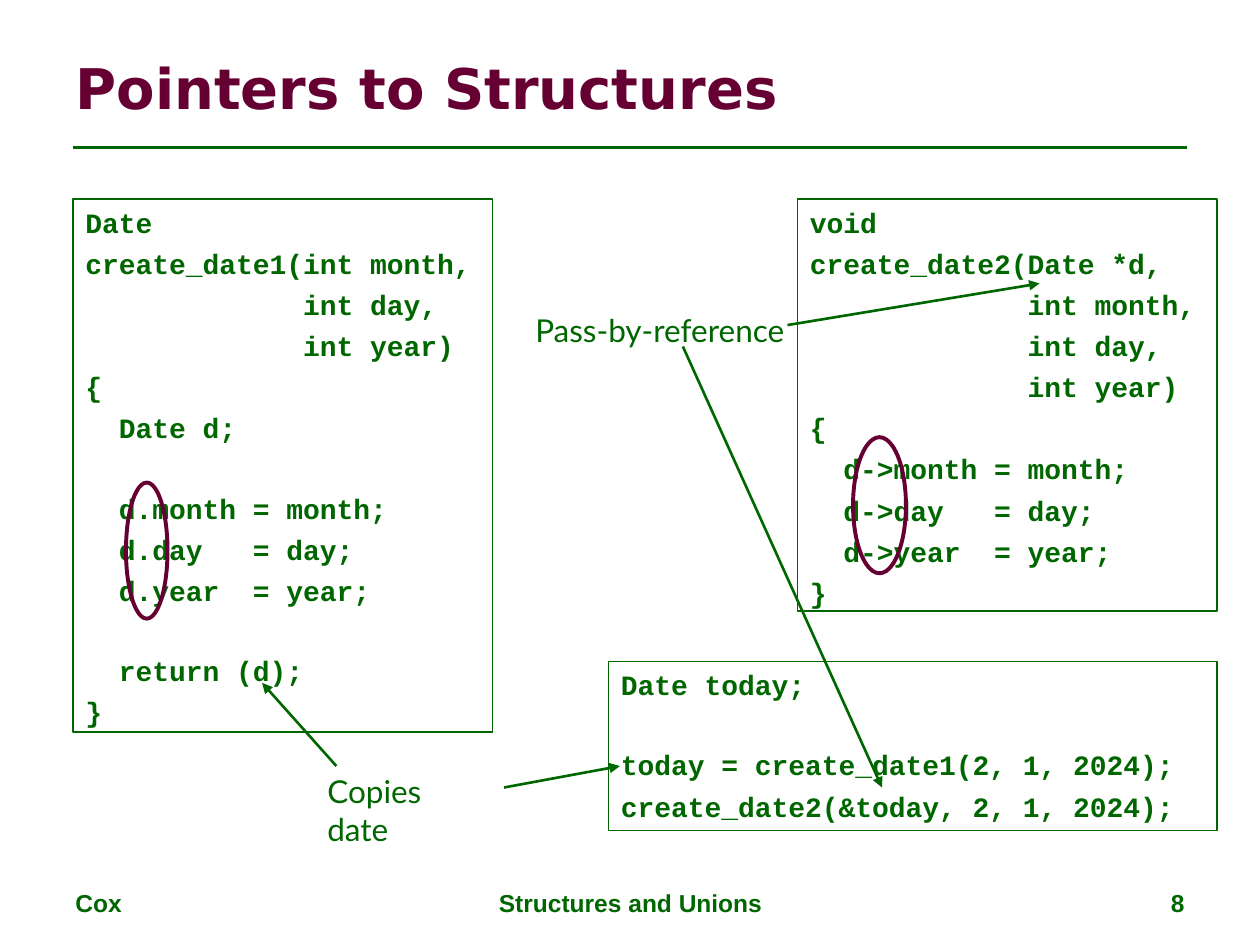
from lxml import etree
from pptx import Presentation
from pptx import util as u
from pptx.dml import color
from pptx.enum import shapes, text
from pptx.oxml import ns

GREEN, PLUM = "006600", "660033"
LINE_GAP, BLANK_GAP = 4.3, 26.7

BY_VALUE = """Date
create_date1(int month,
             int day,
             int year)
{
  Date d;

  d.month = month;
  d.day   = day;
  d.year  = year;

  return (d);
}"""

BY_REFERENCE = """void
create_date2(Date *d,
             int month,
             int day,
             int year)
{
  d->month = month;
  d->day   = day;
  d->year  = year;
}"""

CALLER = """Date today;

today = create_date1(2, 1, 2024);
create_date2(&today, 2, 1, 2024);"""


def rgb(value):
    return color.RGBColor.from_string(value)


def inches(lengths):
    return [u.Inches(length) for length in lengths]


def add_span(para, words, font, size, shade=GREEN, bold=True):
    span = para.add_run()
    span.text = words
    span.font.name = font
    span.font.size = u.Pt(size)
    span.font.bold = bold
    span.font.color.rgb = rgb(shade)


def add_outline(page, kind, box, shade, width):
    shape = page.shapes.add_shape(kind, *inches(box))
    shape.shadow.inherit = False
    shape.fill.background()
    shape.line.color.rgb = rgb(shade)
    shape.line.width = u.Pt(width)
    return shape


def add_line(page, start, end, arrow=True):
    line = page.shapes.add_connector(
        shapes.MSO_CONNECTOR.STRAIGHT, *inches(start + end))
    line.line.color.rgb = rgb(GREEN)
    line.line.width = u.Pt(1.5)
    properties = line.line._get_or_add_ln()
    if arrow:
        etree.SubElement(properties, ns.qn("a:tailEnd"), type="triangle")
    etree.SubElement(properties.getparent(), ns.qn("a:effectLst"))


def add_title(page, box):
    title = page.shapes.title
    title.left, title.top, title.width, title.height = inches(box)
    frame = title.text_frame
    frame.auto_size = text.MSO_AUTO_SIZE.NONE
    frame.vertical_anchor = text.MSO_ANCHOR.MIDDLE
    para = frame.paragraphs[0]
    para.alignment = text.PP_ALIGN.LEFT
    add_span(para, "Pointers to Structures", "DejaVu Sans", 32, PLUM)


def add_code(page, box, code):
    frame = add_outline(page, shapes.MSO_SHAPE.RECTANGLE, box, GREEN, 0.75).text_frame
    frame.word_wrap = True
    frame.vertical_anchor = text.MSO_ANCHOR.TOP
    gap = LINE_GAP
    for number, line in enumerate(code.splitlines()):
        if not line:
            gap = BLANK_GAP
            continue
        para = frame.add_paragraph() if number else frame.paragraphs[0]
        para.alignment = text.PP_ALIGN.LEFT
        para.space_before = u.Pt(gap)
        add_span(para, line, "Courier New", 16)
        gap = LINE_GAP


def add_label(page, box, words, font="Lato", size=18, bold=False,
              align=text.PP_ALIGN.LEFT, wrap=True):
    frame = page.shapes.add_textbox(*inches(box)).text_frame
    frame.word_wrap = wrap
    para = frame.paragraphs[0]
    para.alignment = align
    add_span(para, words, font, size, bold=bold)


def add_footer(page, top, height):
    parts = [
        (0.5, 2.33, "Cox", text.PP_ALIGN.LEFT),
        (3.42, 3.17, "Structures and Unions", text.PP_ALIGN.CENTER),
        (7.17, 2.33, "8", text.PP_ALIGN.RIGHT),
    ]
    for left, width, words, align in parts:
        add_label(page, (left, top, width, height), words, "Arial", 14, True, align)


def main():
    deck = Presentation()
    deck.slide_width, deck.slide_height = inches((10, 7.5))
    page = deck.slides.add_slide(deck.slide_layouts[5])

    add_title(page, (0.5, 0.3, 9, 0.78))
    add_line(page, (0.58, 1.17), (9.42, 1.17), arrow=False)
    add_footer(page, 7, 0.35)

    add_code(page, (0.58, 1.58, 3.33, 4.23), BY_VALUE)
    add_code(page, (6.33, 1.58, 3.33, 3.27), BY_REFERENCE)
    add_code(page, (4.83, 5.25, 4.83, 1.34), CALLER)

    for box in ((1, 3.83, 0.33, 1.08), (6.77, 3.47, 0.42, 1.08)):
        add_outline(page, shapes.MSO_SHAPE.OVAL, box, PLUM, 2.25)

    add_label(page, (2.5, 6.08, 1.4, 0.7), "Copies date")
    add_label(page, (4.15, 2.42, 2.18, 0.4), "Pass-by-reference", wrap=False)

    for start, end in (
        ((2.67, 6.08), (2.08, 5.42)),
        ((4, 6.25), (4.92, 6.08)),
        ((6.25, 2.58), (8.25, 2.25)),
        ((5.42, 2.75), (7, 6.25)),
    ):
        add_line(page, start, end)

    deck.save("out.pptx")


if __name__ == "__main__":
    main()
